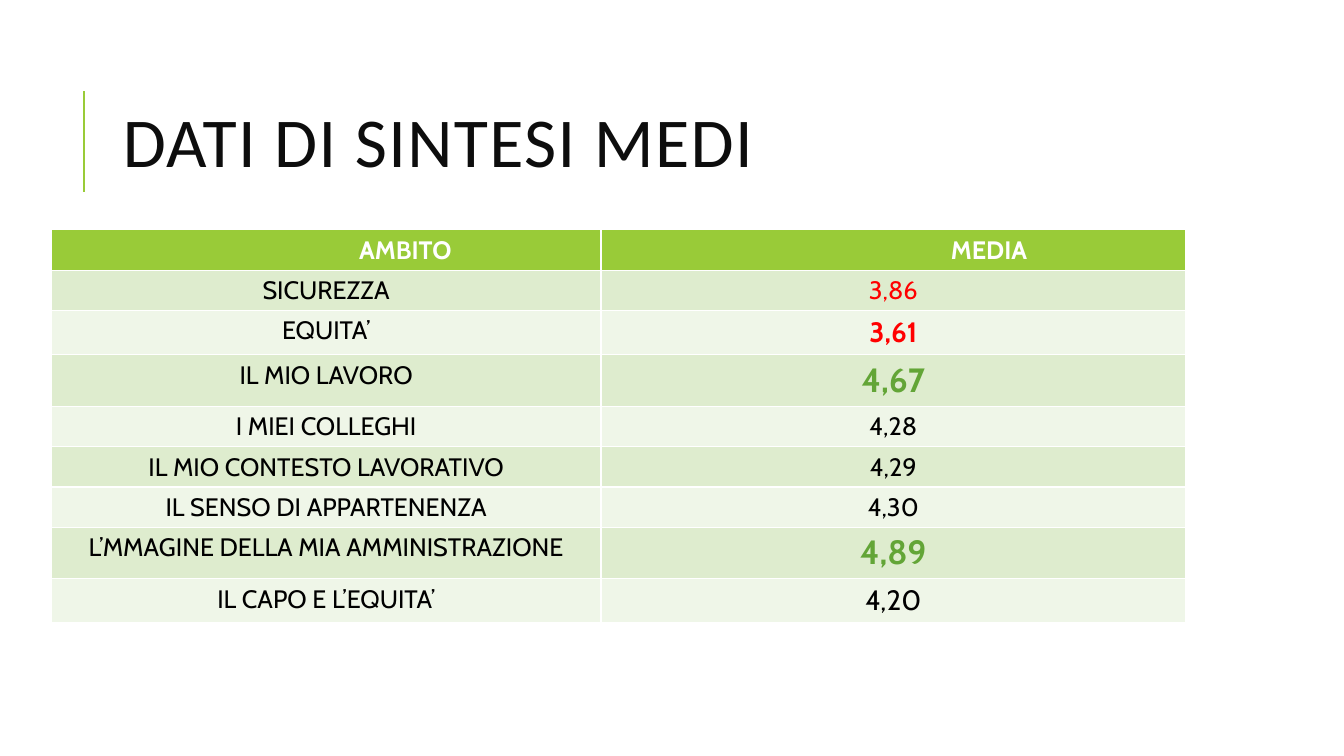
from pptx import Presentation
from pptx.dml.color import RGBColor
from pptx.enum import shapes, text
from pptx.oxml.ns import qn
from pptx.util import Inches, Pt
from lxml import etree

# Content: label, value, value size, value colour, value bold
TITLE = "DATI DI SINTESI MEDI"
HEADS = [("AMBITO", 1.67), ("MEDIA", 2.0)]  # text, left margin
RED, GREEN, BLACK = "FF0000", "63A537", "000000"
ROWS = [
    ("SICUREZZA", "3,86", 18, RED, False),
    ("EQUITA’", "3,61", 20, RED, True),
    ("IL MIO LAVORO", "4,67", 24, GREEN, True),
    ("I MIEI COLLEGHI", "4,28", 18, BLACK, False),
    ("IL MIO CONTESTO LAVORATIVO", "4,29", 18, BLACK, False),
    ("IL SENSO DI APPARTENENZA", "4,30", 18, BLACK, False),
    ("L’MMAGINE DELLA MIA AMMINISTRAZIONE", "4,89", 24, GREEN, True),
    ("IL CAPO E L’EQUITA’", "4,20", 20, BLACK, False),
]
LIME, BANDS = "99CB38", ("DEECCE", "EFF6E8")
WIDTHS = (5.45, 5.8)
HEIGHTS = {18: 0.4, 20: 0.44, 24: 0.51}  # row height by text size


def color(code):
    return RGBColor.from_string(code)


def style(para, font, size, code, bold=False):
    run = para.runs[0]
    run.font.name, run.font.size, run.font.bold = font, Pt(size), bold
    run.font.color.rgb = color(code)
    return run


def put(cell, words, fill, size, code, bold):
    cell.fill.solid()
    cell.fill.fore_color.rgb = color(fill)
    para = cell.text_frame.paragraphs[0]
    para.text = words
    para.alignment = text.PP_ALIGN.CENTER
    style(para, "Cabin", size, code, bold)


deck = Presentation()
deck.slide_width, deck.slide_height = Inches(13.33), Inches(7.5)
slide = deck.slides.add_slide(deck.slide_layouts[6])

# Accent line
line = slide.shapes.add_connector(
    shapes.MSO_CONNECTOR.STRAIGHT, Inches(0.83), Inches(1.9), Inches(0.83), Inches(0.9))
line.line.color.rgb = color(LIME)
line.line.width = Pt(1.5)
etree.SubElement(line._element.spPr, qn("a:effectLst"))

# Title
box = slide.shapes.add_textbox(Inches(1.12), Inches(0.64), Inches(10.63), Inches(1.64))
frame = box.text_frame
frame.word_wrap = True
frame.vertical_anchor = text.MSO_ANCHOR.MIDDLE
head = frame.paragraphs[0]
head.text = TITLE
head.line_spacing = 0.8
run = style(head, "Calibri", 50, "0D0D0D")
run.font._element.set("spc", "100")

# Table
sizes = [18] + [row[2] for row in ROWS]
tall = sum(HEIGHTS[size] for size in sizes)
table = slide.shapes.add_table(
    len(sizes), len(WIDTHS), Inches(0.51), Inches(2.28),
    Inches(sum(WIDTHS)), Inches(tall)).table
for col, width in zip(table.columns, WIDTHS):
    col.width = Inches(width)
for row, size in zip(table.rows, sizes):
    row.height = Inches(HEIGHTS[size])

for c, (words, margin) in enumerate(HEADS):
    cell = table.cell(0, c)
    put(cell, words, LIME, 18, "FFFFFF", True)
    cell.margin_left = Inches(margin)
for r, (label, value, size, code, bold) in enumerate(ROWS):
    fill = BANDS[r % 2]
    put(table.cell(r + 1, 0), label, fill, 18, BLACK, False)
    put(table.cell(r + 1, 1), value, fill, size, code, bold)

deck.save("out.pptx")
